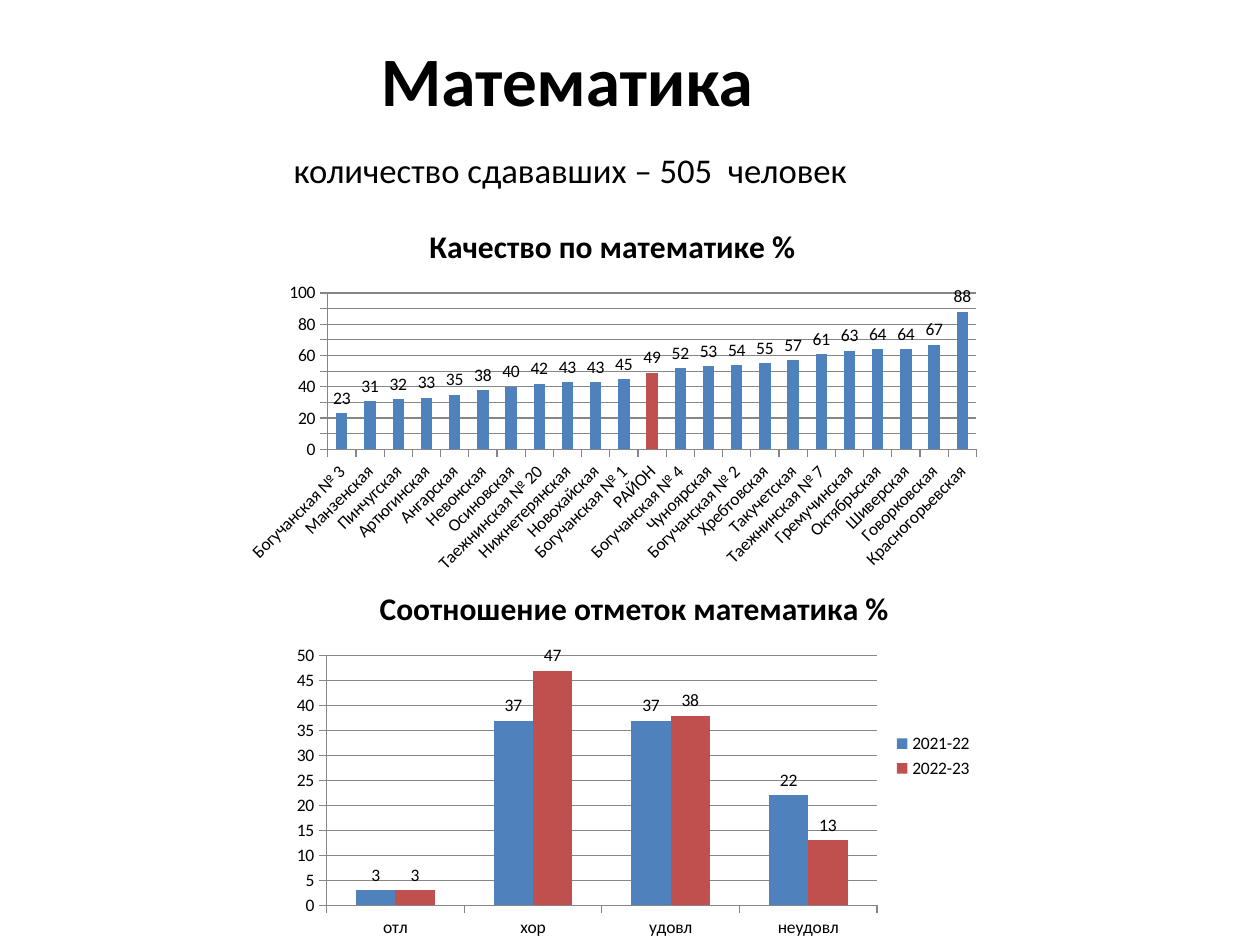
from pptx import Presentation
from pptx.chart.data import CategoryChartData
from pptx.dml.color import RGBColor
from pptx.enum.chart import XL_CHART_TYPE, XL_LABEL_POSITION, XL_LEGEND_POSITION, XL_TICK_MARK
from pptx.enum.text import MSO_ANCHOR, PP_ALIGN
from pptx.util import Cm, Pt

FONT = "Calibri"
BLACK, GRAY, BLUE, RED = "000000", "868686", "4F81BD", "C0504D"


def color(value):
    return RGBColor.from_string(value)


def set_font(font, size, bold=False):
    font.name = FONT
    font.size = Pt(size)
    font.bold = bold
    font.color.rgb = color(BLACK)


presentation = Presentation()
presentation.slide_width = Cm(25.4)
presentation.slide_height = Cm(19.05)
slide = presentation.slides.add_slide(presentation.slide_layouts[5])

# Title with the number of participants
title = slide.shapes.title
title.left, title.top, title.width, title.height = Cm(0), Cm(0.76), Cm(22.86), Cm(3.18)
title.text_frame.vertical_anchor = MSO_ANCHOR.MIDDLE
paragraph = title.text_frame.paragraphs[0]
paragraph.alignment = PP_ALIGN.CENTER
for position, (text, size, bold) in enumerate([
    ("Математика", 39.6, True),
    (" ", 36, False),
    ("количество сдававших – 505  человек ", 19.8, False),
]):
    if position == 1:
        paragraph.add_line_break()
    run = paragraph.add_run()
    run.text = text
    set_font(run.font, size, bold)

# Chart data
quality = {
    "Богучанская № 3": 23, "Манзенская": 31, "Пинчугская": 32, "Артюгинская": 33,
    "Ангарская": 35, "Невонская": 38, "Осиновская": 40, "Таежнинская № 20": 42,
    "Нижнетерянская": 43, "Новохайская": 43, "Богучанская № 1": 45, "РАЙОН": 49,
    "Богучанская № 4": 52, "Чуноярская": 53, "Богучанская № 2": 54, "Хребтовская": 55,
    "Такучетская": 57, "Таежнинская № 7": 61, "Гремучинская": 63, "Октябрьская": 64,
    "Шиверская": 64, "Говорковская": 67, "Красногорьевская": 88,
}
charts = [
    {
        "title": "Качество по математике %",
        "frame": (4.7, 4.12, 15.29, 7.59),
        "categories": list(quality),
        "series": {"Series 1": list(quality.values())},
        "maximum": 100, "step": 10, "legend": False,
    },
    {
        "title": "Соотношение отметок математика %",
        "frame": (5.7, 11.43, 14.17, 7.62),
        "categories": ["отл", "хор", "удовл", "неудовл"],
        "series": {"2021-22": [3, 37, 37, 22], "2022-23": [3, 47, 38, 13]},
        "maximum": 50, "step": 5, "legend": True,
    },
]

# Column charts
for item in charts:
    data = CategoryChartData(number_format="0")
    data.categories = item["categories"]
    for name, values in item["series"].items():
        data.add_series(name, values)
    frame = [Cm(length) for length in item["frame"]]
    chart = slide.shapes.add_chart(XL_CHART_TYPE.COLUMN_CLUSTERED, *frame, data).chart
    set_font(chart.font, 10)

    chart.has_title = True
    chart.chart_title.include_in_layout = False
    chart.chart_title.text_frame.text = item["title"]
    set_font(chart.chart_title.text_frame.paragraphs[0].runs[0].font, 18, True)

    chart.has_legend = item["legend"]
    if item["legend"]:
        chart.legend.position = XL_LEGEND_POSITION.RIGHT
        chart.legend.include_in_layout = False
        set_font(chart.legend.font, 10)

    # Axes and gridlines
    value_axis, category_axis = chart.value_axis, chart.category_axis
    value_axis.minimum_scale = 0
    value_axis.maximum_scale = item["maximum"]
    value_axis.major_unit = item["step"]
    value_axis.has_major_gridlines = True
    value_axis.major_gridlines.format.line.color.rgb = color(GRAY)
    for axis in (value_axis, category_axis):
        axis.major_tick_mark = XL_TICK_MARK.OUTSIDE
        axis.format.line.color.rgb = color(GRAY)
        set_font(axis.tick_labels.font, 10)

    # Columns and value labels
    plot = chart.plots[0]
    plot.vary_by_categories = False
    plot.gap_width = 150
    plot.overlap = 0
    for series, fill in zip(plot.series, (BLUE, RED)):
        series.format.fill.solid()
        series.format.fill.fore_color.rgb = color(fill)
        labels = series.data_labels
        labels.show_value = True
        labels.number_format = "0"
        labels.number_format_is_linked = False
        labels.position = XL_LABEL_POSITION.OUTSIDE_END
        set_font(labels.font, 10)

    # The district average stands out
    if "РАЙОН" in item["categories"]:
        point = plot.series[0].points[item["categories"].index("РАЙОН")]
        point.format.fill.solid()
        point.format.fill.fore_color.rgb = color(RED)

presentation.save("out.pptx")
